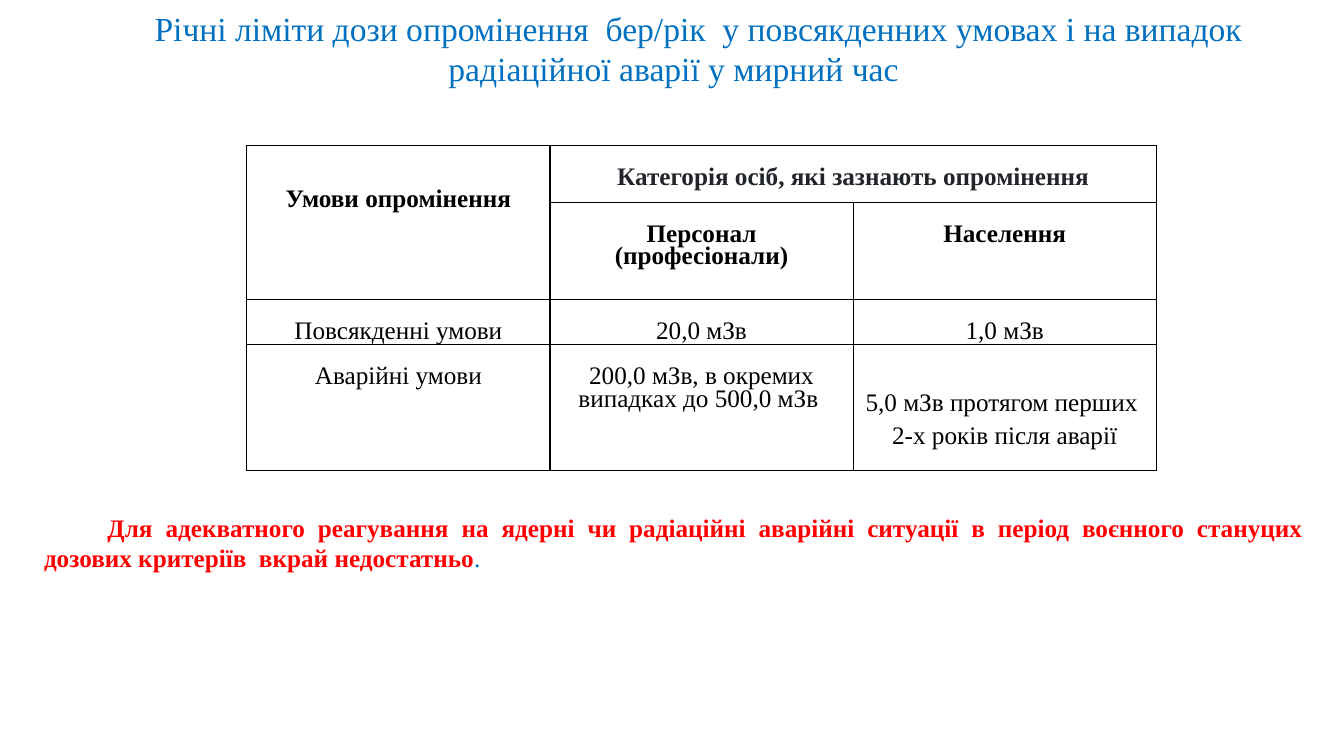
from lxml import etree
from pptx import Presentation
from pptx.dml.color import RGBColor
from pptx.enum.shapes import MSO_SHAPE
from pptx.enum.text import MSO_ANCHOR, MSO_AUTO_SIZE, PP_ALIGN
from pptx.oxml.ns import qn
from pptx.util import Cm, Pt

CENTER, JUSTIFY = PP_ALIGN.CENTER, PP_ALIGN.JUSTIFY
TOP, MIDDLE = MSO_ANCHOR.TOP, MSO_ANCHOR.MIDDLE
FIT_SHAPE = MSO_AUTO_SIZE.SHAPE_TO_FIT_TEXT
RECT = MSO_SHAPE.RECTANGLE

FONT = "Times New Roman"
LINE = Pt(16.1)
COLORS = {
    "white": "FFFFFF",
    "black": "000000",
    "dark": "212529",
    "blue": "0070C0",
    "red": "FF0000",
}
COL_WIDTH = Cm(7.64)
ROW_HEIGHTS = [Cm(1.44), Cm(2.44), Cm(1.14), Cm(3.16)]
CELLS = [
    (0, 0, ["Умови опромінення"], "black"),
    (0, 1, ["Категорія осіб, які зазнають опромінення"], "dark"),
    (1, 1, ["Персонал (професіонали)"], "black"),
    (1, 2, ["Населення"], "black"),
    (2, 0, ["Повсякденні умови"], "black"),
    (2, 1, ["20,0 мЗв"], "black"),
    (2, 2, ["1,0 мЗв"], "black"),
    (3, 0, ["Аварійні умови"], "black"),
    (3, 1, ["200,0 мЗв, в окремих випадках до 500,0 мЗв "], "black"),
    (3, 2, ["5,0 мЗв протягом перших ", "2-х років після аварії"], "black"),
]
TITLE = ("Річні ліміти дози опромінення  бер/рік  у повсякденних умовах "
         "і на випадок радіаційної аварії у мирний час")
WARNING = ("Для адекватного реагування на ядерні чи радіаційні аварійні ситуації "
           "в період воєнного стануцих дозових критеріїв  вкрай недостатньо")


def rgb(name):
    """Return the named colour."""
    return RGBColor.from_string(COLORS[name])


def style_run(r, size, color, bold=False):
    """Format one run."""
    r.font.name = FONT
    r.font.size = Pt(size)
    r.font.bold = bold
    r.font.color.rgb = rgb(color)


def indent_first_line(p, width):
    """Indent the first line of a paragraph."""
    p_pr = p._p.get_or_add_pPr()
    p_pr.set("marL", "0")
    p_pr.set("indent", str(width))


def set_borders(cell):
    """Draw a thin black line on every side of a cell."""
    tc_pr = cell._tc.get_or_add_tcPr()
    for side in ("a:lnL", "a:lnR", "a:lnT", "a:lnB"):
        ln = etree.SubElement(tc_pr, qn(side), w=str(Pt(1)))
        fill = etree.SubElement(ln, qn("a:solidFill"))
        etree.SubElement(fill, qn("a:srgbClr"), val=COLORS["black"])


def fill_cell(cell, lines, color, bold, top):
    """Write centred lines into a cell below a top margin."""
    cell.margin_top = top
    tf = cell.text_frame
    tf.text = "\n".join(lines)
    for p in tf.paragraphs:
        p.alignment = CENTER
        p.line_spacing = LINE
        style_run(p.runs[0], 18, color, bold)
    for p in tf.paragraphs[:-1]:
        p.line_spacing = 1.07
        p.space_after = Pt(8)


def add_dose_table(slide):
    """Add the table of dose limits."""
    frame = slide.shapes.add_table(len(ROW_HEIGHTS), 3, Cm(6.22), Cm(3.67),
                                   3 * COL_WIDTH, sum(ROW_HEIGHTS))
    table = frame.table
    table.first_row = table.horz_banding = False
    for column in table.columns:
        column.width = COL_WIDTH
    for row, height in zip(table.rows, ROW_HEIGHTS):
        row.height = height
    for cell in table.iter_cells():
        cell.margin_left = cell.margin_right = Cm(0.18)
        cell.margin_top = cell.margin_bottom = 0
        cell.vertical_anchor = TOP
        set_borders(cell)
        cell.fill.background()
    table.cell(0, 0).merge(table.cell(1, 0))
    table.cell(0, 1).merge(table.cell(0, 2))
    for row, col, lines, color in CELLS:
        cell = table.cell(row, col)
        top = LINE
        if cell.is_merge_origin and cell.span_height > 1:
            top = 2 * LINE
        elif len(lines) > 1:
            top = Pt(30)
        fill_cell(cell, lines, color, row < 2, top)


def add_title(slide):
    """Add the white title block."""
    sp = slide.shapes.add_shape(RECT, Cm(0.86), Cm(0.05), Cm(32.23), Cm(2.31))
    sp.shadow.inherit = False
    sp.fill.solid()
    sp.fill.fore_color.rgb = rgb("white")
    sp.line.fill.background()
    tf = sp.text_frame
    tf.word_wrap = True
    tf.auto_size = FIT_SHAPE
    tf.vertical_anchor = MIDDLE
    tf.text = TITLE
    p = tf.paragraphs[0]
    p.alignment = CENTER
    indent_first_line(p, Cm(1.25))
    style_run(p.runs[0], 24, "blue")


def add_warning(slide):
    """Add the justified warning below the table."""
    sp = slide.shapes.add_textbox(Cm(0.86), Cm(12.78), Cm(32.23), Cm(1.8))
    tf = sp.text_frame
    tf.word_wrap = True
    tf.auto_size = FIT_SHAPE
    p = tf.paragraphs[0]
    p.alignment = JUSTIFY
    indent_first_line(p, Cm(1.6))
    for text, color, bold in [(WARNING, "red", True), (".", "blue", False)]:
        r = p.add_run()
        r.text = text
        style_run(r, 18, color, bold)


def main():
    """Build and save the slide."""
    prs = Presentation()
    prs.slide_width, prs.slide_height = Cm(33.87), Cm(19.05)
    slide = prs.slides.add_slide(prs.slide_layouts[6])
    add_dose_table(slide)
    add_title(slide)
    add_warning(slide)
    prs.save("out.pptx")


if __name__ == "__main__":
    main()
